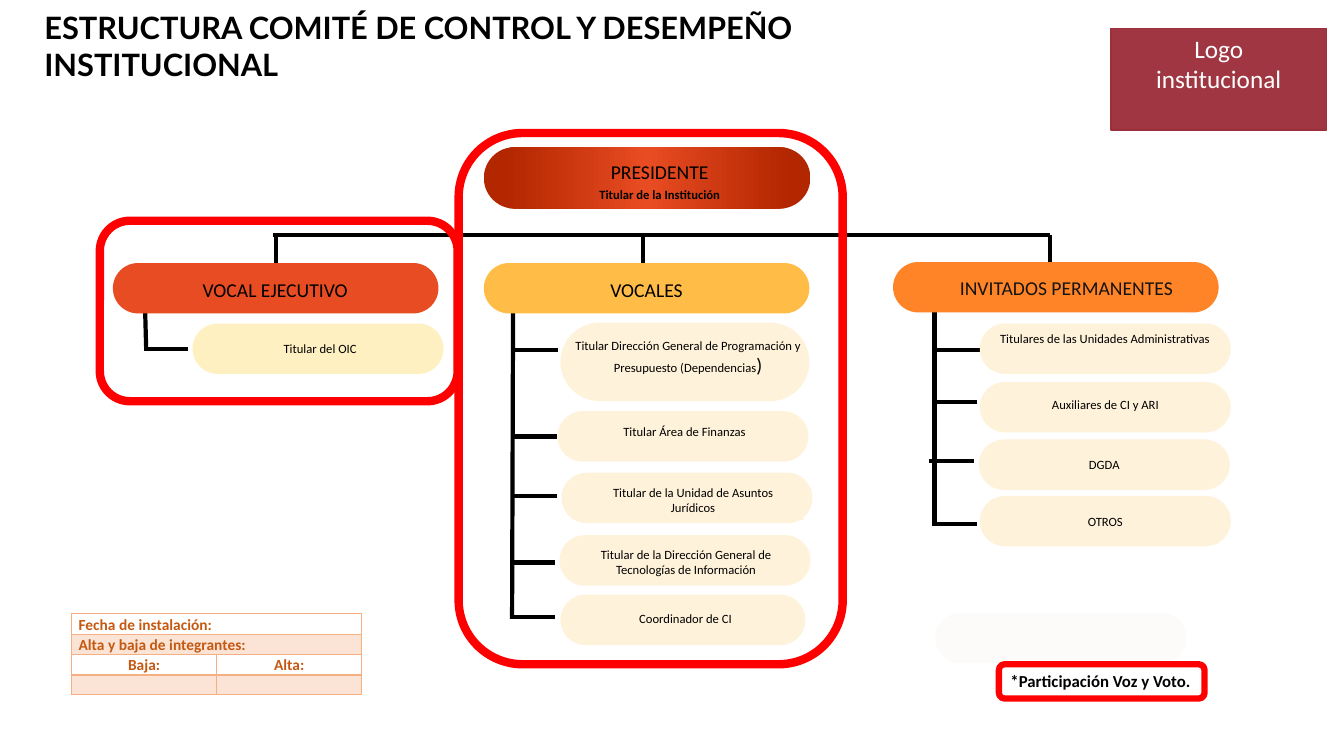
from copy import deepcopy
from dataclasses import dataclass
from typing import NamedTuple, Optional

from lxml.etree import SubElement
from pptx import Presentation
from pptx.dml.color import RGBColor
from pptx.enum.shapes import MSO_CONNECTOR, MSO_SHAPE
from pptx.enum.text import MSO_ANCHOR, MSO_AUTO_SIZE, PP_ALIGN
from pptx.oxml.ns import qn
from pptx.util import Inches, Pt

CELL = Inches(0.1)  # one column or one row of the slide grid
COLUMNS, ROWS = 133.33, 75
STUB = 4.4


@dataclass(frozen=True)
class Theme:
    title_font: str = "Lato"
    font: str = "Calibri"
    black: str = "000000"
    white: str = "FFFFFF"
    guests_ink: str = "141412"
    red: str = "FF0000"
    vermilion: str = "E84C22"
    dark_vermilion: str = "B22600"
    amber: str = "FFBD47"
    orange: str = "FF8427"
    cream: str = "FFF2DA"
    yellow_cream: str = "FFF0C2"
    faint: str = "FCFBF9"
    maroon: str = "9D2E3B"
    table_ink: str = "C45911"
    table_border: str = "F4B083"
    table_band: str = "FBE4D5"
    title_size: float = 22
    logo_size: float = 18
    heading_size: float = 14
    note_size: float = 12
    table_size: float = 11
    member_size: float = 9


THEME = Theme()


class Box(NamedTuple):
    left: float
    top: float
    width: float
    height: float


class Point(NamedTuple):
    x: float
    y: float


@dataclass(frozen=True)
class Line:
    text: str
    size: float = THEME.member_size
    bold: bool = False
    color: str = THEME.black
    spacing: float = 1.0
    ending: str = ""  # closing characters, set at heading size


@dataclass(frozen=True)
class Pill:
    box: Box
    fill: str
    lines: tuple[Line, ...] = ()
    label: Optional[Box] = None  # separate text area; without it the pill holds the text
    anchor: MSO_ANCHOR = MSO_ANCHOR.TOP
    label_fill: Optional[str] = None


@dataclass(frozen=True)
class Branch:
    drop: float
    spine: tuple[Point, Point]
    stubs: tuple[Point, ...]


def heading(text: str, color: str = THEME.black, spacing: float = 1.25) -> Line:
    return Line(text, THEME.heading_size, color=color, spacing=spacing)


def member(box: Box, text: str, label: Optional[Box] = None, fill: str = THEME.cream,
           spacing: float = 1.0, ending: str = "", label_fill: Optional[str] = None) -> Pill:
    return Pill(box, fill, (Line(text, spacing=spacing, ending=ending),), label,
                label_fill=label_fill)


BUS_ROW = 23.3
DROP_END = 26.1
BRANCHES = (
    Branch(27.4, (Point(14.4, 30.8), Point(14.5, 34.6)), (Point(14.3, 34.6),)),
    Branch(63.8, (Point(50.9, 30.8), Point(50.8, 61.4)),
           (Point(51, 34.7), Point(50.9, 43.3), Point(50.9, 49.2), Point(50.7, 55.8),
            Point(50.7, 61.2))),
    Branch(104.2, (Point(92.7, 30.3), Point(92.7, 52)),
           (Point(93, 34.7), Point(92.5, 39.9), Point(92.2, 45.7), Point(92.5, 52))),
)

PRESIDENT = Pill(Box(48, 14.6, 32.4, 6.1), THEME.vermilion,
                 (heading("PRESIDENTE"),
                  Line("Titular de la Institución", bold=True, spacing=1.25)),
                 Box(49.6, 14.8, 31.7, 14.2))
PILLS = (
    Pill(Box(11.2, 26.1, 32.3, 5), THEME.vermilion, (heading("VOCAL EJECUTIVO"),),
         Box(11.2, 26.6, 32.2, 3.7), MSO_ANCHOR.MIDDLE),
    member(Box(19.1, 32.1, 24.9, 5), "Titular del OIC", Box(19.3, 33, 24.9, 2.8),
           THEME.yellow_cream, 1.25),
    Pill(Box(48, 26.1, 32.3, 5), THEME.amber, (heading("VOCALES"),),
         Box(48, 26.6, 32.3, 3.7), MSO_ANCHOR.MIDDLE),
    member(Box(55.6, 32, 24.7, 7.8),
           "Titular Dirección General de Programación y Presupuesto (Dependencias",
           Box(55.8, 33, 24.9, 4.9), ending=")"),
    member(Box(55.3, 40.8, 24.9, 5), "Titular Área de Finanzas", Box(56.9, 41.6, 22, 2.5)),
    member(Box(55.7, 46.9, 24.9, 5), "Titular de la Unidad de Asuntos Jurídicos",
           Box(57.8, 47.6, 21.9, 4), label_fill=THEME.cream),
    member(Box(55.5, 53.1, 24.9, 5),
           "Titular de la Dirección General de Tecnologías de Información",
           Box(55.6, 53.8, 24.9, 4)),
    member(Box(55.6, 59, 24.3, 5), "Coordinador de CI", Box(57.6, 60.1, 20.8, 2.5)),
    Pill(Box(88.6, 26, 32.3, 5), THEME.orange,
         (heading("INVITADOS PERMANENTES", THEME.guests_ink, 1.0),), Box(93.7, 26.9, 24.2, 3.4)),
    member(Box(97.2, 32.1, 24.9, 5), "Titulares de las Unidades Administrativas",
           Box(97.4, 32.3, 24.4, 4)),
    member(Box(97.2, 37.9, 24.9, 5), "Auxiliares de CI y ARI", Box(98.7, 38.9, 21.9, 2.5)),
    member(Box(97.1, 43.6, 24.9, 5), "DGDA"),
    member(Box(97.2, 49.2, 24.9, 5), "OTROS"),
    Pill(Box(92.8, 60.8, 24.9, 5), THEME.faint),
)
VOTING_FRAMES = (Box(45.5, 13.2, 38.1, 52.7), Box(9.9, 21.9, 35.5, 17.9))
TABLE_BOX = Box(7.1, 60.9, 28.8, 7.9)
TABLE_ROWS = (("Fecha de instalación:",), ("Alta y baja de integrantes:",),
              ("Baja:", "Alta:"), ("", ""))


def rgb(color: str) -> RGBColor:
    return RGBColor.from_string(color)


def emu(box) -> list[int]:
    """Turn grid columns and rows into slide lengths."""
    return [round(length * CELL) for length in box]


def style(paragraph, line: Line, align=PP_ALIGN.CENTER, font: str = THEME.font) -> None:
    paragraph.alignment = align
    paragraph.line_spacing = line.spacing
    paragraph.font.name = font
    paragraph.font.size = Pt(line.size)
    paragraph.font.bold = line.bold
    paragraph.font.color.rgb = rgb(line.color)


def write(frame, lines: tuple[Line, ...], anchor=MSO_ANCHOR.TOP, align=PP_ALIGN.CENTER,
          font: str = THEME.font) -> None:
    frame.word_wrap = True
    frame.auto_size = MSO_AUTO_SIZE.NONE
    frame.vertical_anchor = anchor
    for index, line in enumerate(lines):
        paragraph = frame.add_paragraph() if index else frame.paragraphs[0]
        paragraph.add_run().text = line.text
        if line.ending:
            span = paragraph.add_run()
            span.text = line.ending
            span.font.size = Pt(THEME.heading_size)
        style(paragraph, line, align, font)


def add_shape(page, kind: MSO_SHAPE, box: Box, fill: Optional[str] = None,
              line: Optional[str] = None, width: float = 1):
    shape = page.shapes.add_shape(kind, *emu(box))
    shape.shadow.inherit = False
    if fill:
        shape.fill.solid()
        shape.fill.fore_color.rgb = rgb(fill)
    else:
        shape.fill.background()
    if line:
        shape.line.color.rgb = rgb(line)
        shape.line.width = Pt(width)
    else:
        shape.line.fill.background()
    return shape


def add_link(page, start: Point, end: Point) -> None:
    link = page.shapes.add_connector(MSO_CONNECTOR.STRAIGHT, *emu(start + end))
    link.line.color.rgb = rgb(THEME.black)
    link.line.width = Pt(3)
    SubElement(link.element.spPr, qn("a:effectLst"))


def add_branches(page) -> None:
    add_link(page, Point(27.1, BUS_ROW), Point(BRANCHES[-1].drop, BUS_ROW))
    for branch in BRANCHES:
        add_link(page, Point(branch.drop, BUS_ROW), Point(branch.drop, DROP_END))
        add_link(page, *branch.spine)
        for stub in branch.stubs:
            add_link(page, stub, Point(stub.x + STUB, stub.y))


def add_pill(page, pill: Pill):
    shape = add_shape(page, MSO_SHAPE.ROUNDED_RECTANGLE, pill.box, pill.fill)
    shape.adjustments[0] = 0.5
    if pill.label:
        label = page.shapes.add_textbox(*emu(pill.label))
        if pill.label_fill:
            label.fill.solid()
            label.fill.fore_color.rgb = rgb(pill.label_fill)
        write(label.text_frame, pill.lines, pill.anchor)
    elif pill.lines:
        write(shape.text_frame, pill.lines, MSO_ANCHOR.MIDDLE)
    return shape


def shade_president(shape) -> None:
    """Fill with a band that is bright in the middle and dark at both ends."""
    shape.fill.gradient()
    shape.fill.gradient_angle = 0
    stop_list = shape.element.spPr.find(qn("a:gradFill")).find(qn("a:gsLst"))
    stop_list.append(deepcopy(stop_list[-1]))
    shades = ((0.06, THEME.dark_vermilion), (0.5, THEME.vermilion), (0.94, THEME.dark_vermilion))
    for stop, (position, color) in zip(shape.fill.gradient_stops, shades):
        stop.position = position
        stop.color.rgb = rgb(color)


def add_borders(cell) -> None:
    properties = cell._tc.get_or_add_tcPr()
    for side in ("lnL", "lnR", "lnT", "lnB"):
        border = SubElement(properties, qn(f"a:{side}"), w=str(Pt(1)))
        SubElement(SubElement(border, qn("a:solidFill")), qn("a:srgbClr"), val=THEME.table_border)


def add_record_table(page) -> None:
    table = page.shapes.add_table(len(TABLE_ROWS), 2, *emu(TABLE_BOX)).table
    table.first_row = table.horz_banding = False
    for row, texts in enumerate(TABLE_ROWS):
        for column in range(2):
            cell = table.cell(row, column)
            add_borders(cell)
            if row % 2:
                cell.fill.solid()
                cell.fill.fore_color.rgb = rgb(THEME.table_band)
            else:
                cell.fill.background()
            cell.margin_left = cell.margin_right = Inches(0.07)
            cell.margin_top = cell.margin_bottom = 0
            text = texts[column] if column < len(texts) else ""
            cell.text = text
            style(cell.text_frame.paragraphs[0],
                  Line(text, THEME.table_size, True, THEME.table_ink, 1.07),
                  PP_ALIGN.CENTER if len(texts) == 2 else PP_ALIGN.LEFT)
        if len(texts) == 1:
            table.cell(row, 0).merge(table.cell(row, 1))


def add_title(page) -> None:
    title = page.shapes.title
    title.left, title.top, title.width, title.height = emu(Box(3.4, 2.2, 87.1, 4.6))
    text = "ESTRUCTURA COMITÉ DE CONTROL Y DESEMPEÑO INSTITUCIONAL"
    write(title.text_frame, (Line(text, THEME.title_size, True),), MSO_ANCHOR.MIDDLE,
          PP_ALIGN.LEFT, THEME.title_font)


def add_logo_area(page) -> None:
    area = add_shape(page, MSO_SHAPE.RECTANGLE, Box(110.2, 2.8, 21.4, 10.1),
                     THEME.maroon, THEME.maroon)
    color = area.element.spPr.find(qn("a:solidFill"))[0]
    SubElement(color, qn("a:alpha"), val="96000")
    write(area.text_frame, tuple(Line(text, THEME.logo_size, color=THEME.white)
                                 for text in ("Logo", "institucional")))


def main() -> None:
    deck = Presentation()
    deck.slide_width, deck.slide_height = emu((COLUMNS, ROWS))
    page = deck.slides.add_slide(deck.slide_layouts[5])
    add_title(page)
    add_branches(page)
    shade_president(add_pill(page, PRESIDENT))
    for pill in PILLS:
        add_pill(page, pill)
    add_record_table(page)
    for frame in VOTING_FRAMES:
        add_shape(page, MSO_SHAPE.FLOWCHART_ALTERNATE_PROCESS, frame, line=THEME.red, width=6)
    note = add_shape(page, MSO_SHAPE.ROUNDED_RECTANGLE, Box(99.1, 65.9, 20.4, 3.4),
                     THEME.white, THEME.red, 4.5)
    write(note.text_frame, (Line("*Participación Voz y Voto.", THEME.note_size, True),),
          align=PP_ALIGN.LEFT)
    add_logo_area(page)
    deck.save("out.pptx")


if __name__ == "__main__":
    main()
